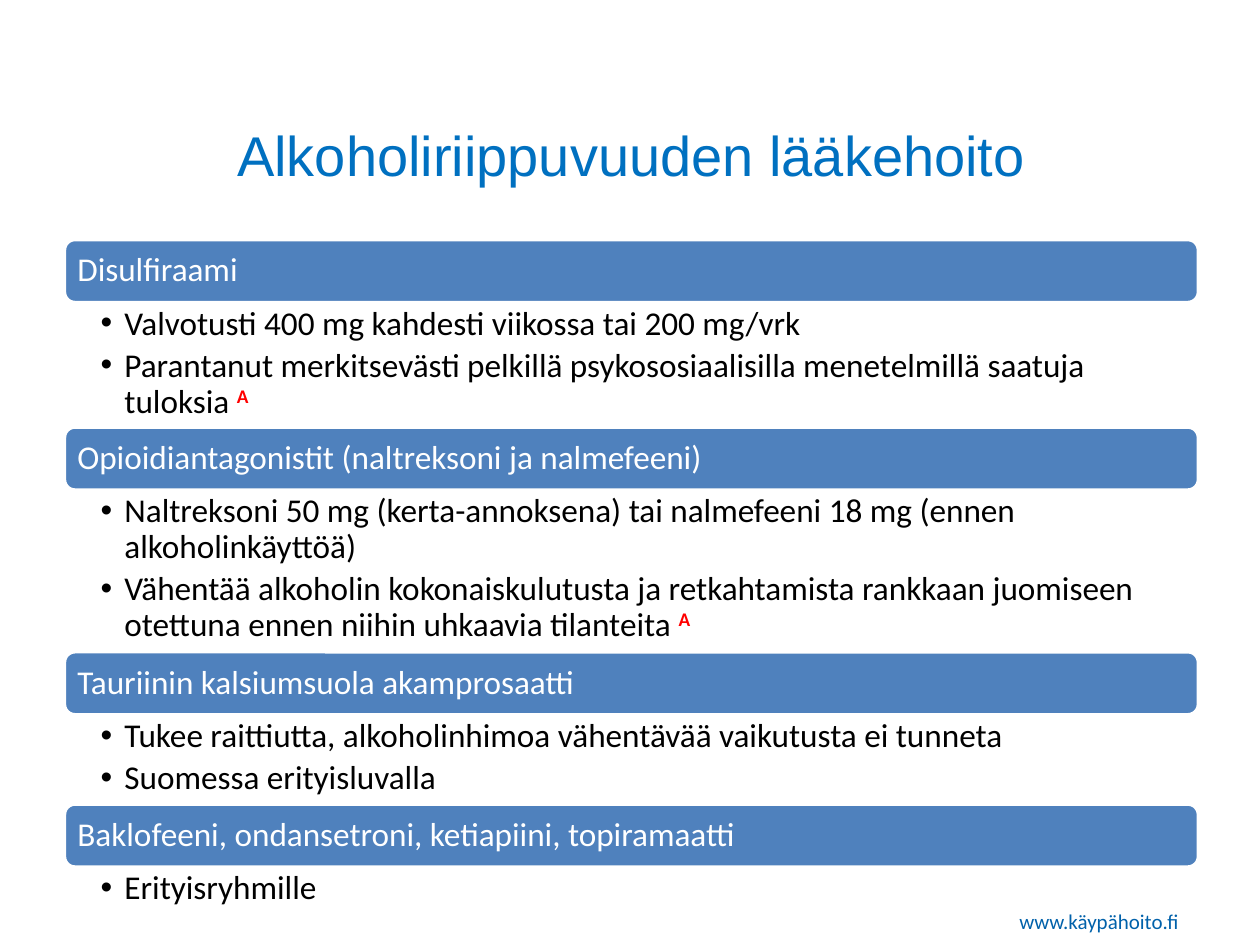
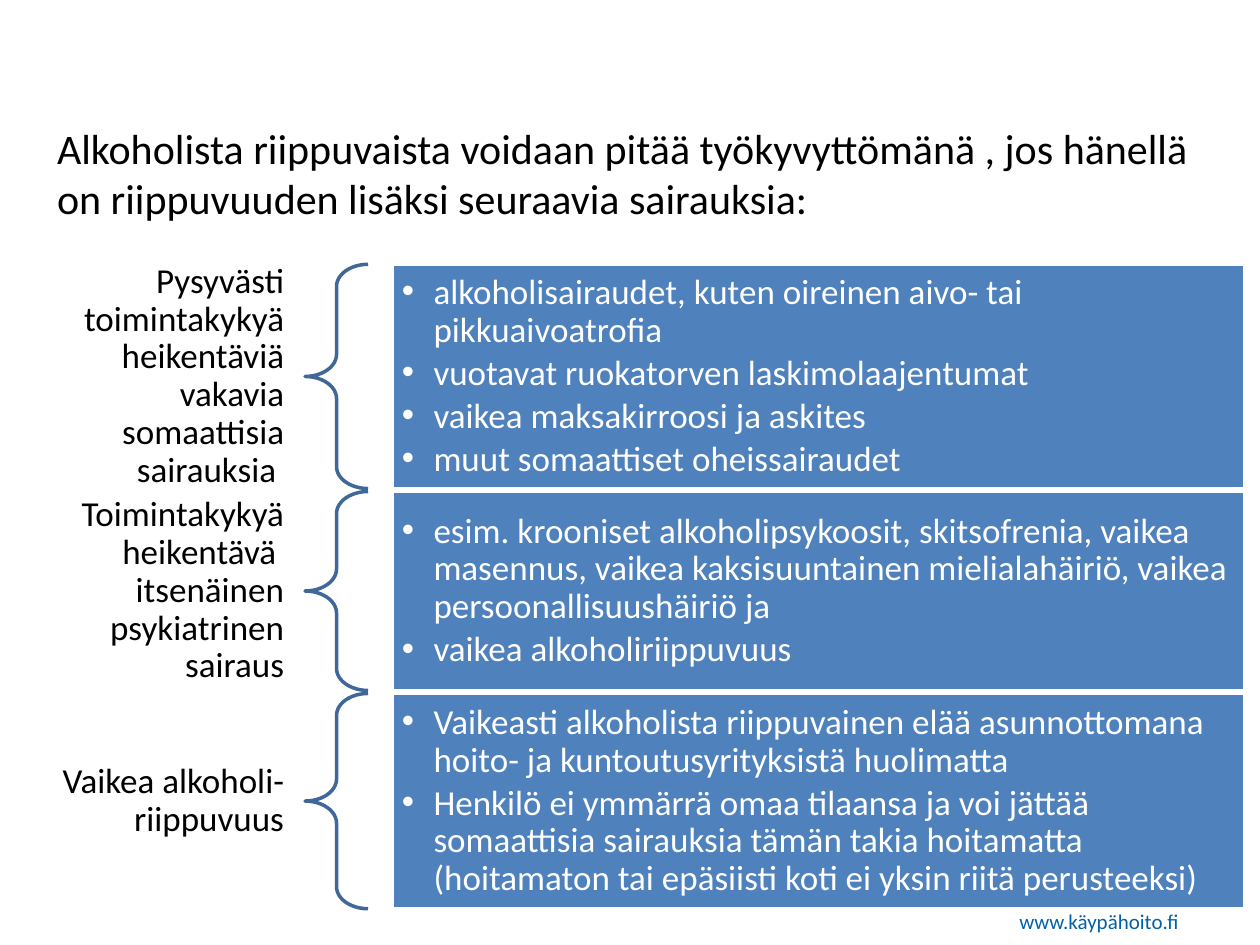
from lxml.etree import SubElement
from pptx import Presentation
from pptx.dml.color import RGBColor
from pptx.enum.shapes import MSO_SHAPE
from pptx.enum.text import MSO_ANCHOR, MSO_AUTO_SIZE, PP_ALIGN
from pptx.oxml.ns import qn
from pptx.util import Cm, Pt

BLUE = RGBColor(0x4F, 0x81, 0xBD)
BRACE_BLUE = RGBColor(0x3F, 0x67, 0x97)
TITLE_BLUE = RGBColor(0x00, 0x70, 0xC0)
FOOTER_BLUE = RGBColor(0x00, 0x61, 0xAA)
RED = RGBColor(0xFF, 0x00, 0x00)
BLACK = RGBColor(0x00, 0x00, 0x00)
WHITE = RGBColor(0xFF, 0xFF, 0xFF)


def set_frame(shape, insets, anchor):
    """Set wrapping, anchor and insets (left, top, right, bottom in cm)."""
    frame = shape.text_frame
    frame.word_wrap = True
    frame.auto_size = MSO_AUTO_SIZE.NONE
    frame.vertical_anchor = anchor
    (frame.margin_left, frame.margin_top,
     frame.margin_right, frame.margin_bottom) = [Cm(inset) for inset in insets]
    return frame


def write(frame, lines, size, color, font="Calibri", align=PP_ALIGN.LEFT,
          spacing=None, after=0, indent=0):
    """Write lines of (text, evidence grade); an indent adds bullets."""
    frame.text = "\n".join(text for text, grade in lines)
    for paragraph, (text, grade) in zip(frame.paragraphs, lines):
        paragraph.alignment = align
        paragraph.space_before = Pt(0)
        paragraph.space_after = Pt(after)
        if spacing:
            paragraph.line_spacing = spacing
        if indent:
            props = paragraph._p.get_or_add_pPr()
            props.set("marL", str(Cm(indent)))
            props.set("indent", str(-Cm(indent)))
            SubElement(props, qn("a:buFont")).set("typeface", "Arial")
            SubElement(props, qn("a:buChar")).set("char", "•")
        for run in paragraph.runs:
            run.font.name = font
            run.font.size = Pt(size)
            run.font.color.rgb = color
        if grade:
            mark = paragraph.add_run()
            mark.text = grade
            mark.font.name = font
            mark.font.size = Pt(size)
            mark.font.bold = True
            mark.font.color.rgb = RED
            mark._r.get_or_add_rPr().set("baseline", "30000")


prs = Presentation()
prs.slide_width, prs.slide_height = Cm(25.4), Cm(19.05)
title_only = prs.slide_layouts[5]
treatment_slide = prs.slides.add_slide(title_only)
disability_slide = prs.slides.add_slide(title_only)

# Shared footer
for slide in (treatment_slide, disability_slide):
    footer = slide.shapes.add_textbox(Cm(20.3), Cm(18.19), Cm(4.8), Cm(0.76))
    write(set_frame(footer, (0.25, 0.13, 0.25, 0.13), MSO_ANCHOR.TOP),
          [("www.käypähoito.fi", "")], 12, FOOTER_BLUE)

# Slide 1: drug treatment of alcohol dependence
title = treatment_slide.shapes.title
title.left, title.top, title.width, title.height = Cm(1.3), Cm(1.52), Cm(22.86), Cm(3.18)
write(set_frame(title, (0.25, 0.13, 0.25, 0.13), MSO_ANCHOR.MIDDLE),
      [("Alkoholiriippuvuuden lääkehoito", "")], 32, TITLE_BLUE,
      font="Arial", align=PP_ALIGN.CENTER)

# Drug name, height of its notes, notes with evidence grade
drugs = [
    ("Disulfiraami", 2.51, [
        ("Valvotusti 400 mg kahdesti viikossa tai 200 mg/vrk", ""),
        ("Parantanut merkitsevästi pelkillä psykososiaalisilla menetelmillä "
         "saatuja tuloksia ", "A")]),
    ("Opioidiantagonistit (naltreksoni ja nalmefeeni)", 3.26, [
        ("Naltreksoni 50 mg (kerta-annoksena) tai nalmefeeni 18 mg "
         "(ennen alkoholinkäyttöä)", ""),
        ("Vähentää alkoholin kokonaiskulutusta ja retkahtamista rankkaan "
         "juomiseen otettuna ennen niihin uhkaavia tilanteita ", "A")]),
    ("Tauriinin kalsiumsuola akamprosaatti", 1.8, [
        ("Tukee raittiutta, alkoholinhimoa vähentävää vaikutusta ei tunneta", ""),
        ("Suomessa erityisluvalla", "")]),
    ("Baklofeeni, ondansetroni, ketiapiini, topiramaatti", 0.86, [
        ("Erityisryhmille", "")]),
]
BAND_HEIGHT = 1.27
top = 4.83
for drug, notes_height, notes in drugs:
    band = treatment_slide.shapes.add_shape(
        MSO_SHAPE.ROUNDED_RECTANGLE, Cm(1.3), Cm(top), Cm(22.86), Cm(BAND_HEIGHT))
    band.shadow.inherit = False
    band.fill.solid()
    band.fill.fore_color.rgb = BLUE
    band.line.color.rgb = WHITE
    band.line.width = Pt(2)
    write(set_frame(band, (0.2, 0.2, 0.2, 0.2), MSO_ANCHOR.MIDDLE),
          [(drug, "")], 19, WHITE, spacing=0.9)
    top += BAND_HEIGHT

    note_box = treatment_slide.shapes.add_textbox(
        Cm(1.3), Cm(top), Cm(22.86), Cm(notes_height))
    write(set_frame(note_box, (0.73, 0.08, 0.38, 0.08), MSO_ANCHOR.TOP),
          notes, 19, BLACK, spacing=0.9, after=3.5, indent=0.48)
    top += notes_height

# Slide 2: illnesses that justify work disability
title = disability_slide.shapes.title
title.left, title.top, title.width, title.height = Cm(0.9), Cm(2.34), Cm(23.44), Cm(2.31)
write(set_frame(title, (0.25, 0.13, 0.25, 0.13), MSO_ANCHOR.TOP),
      [("Alkoholista riippuvaista voidaan pitää työkyvyttömänä , jos hänellä "
        "on riippuvuuden lisäksi seuraavia sairauksia:", "")], 24, BLACK)

# Illness group, height of its row, examples
illnesses = [
    ("Pysyvästi toimintakykyä heikentäviä vakavia somaattisia sairauksia ", 4.52, [
        "alkoholisairaudet, kuten oireinen aivo- tai pikkuaivoatrofia",
        "vuotavat ruokatorven laskimolaajentumat",
        "vaikea maksakirroosi ja askites",
        "muut somaattiset oheissairaudet"]),
    ("Toimintakykyä heikentävä  itsenäinen psykiatrinen sairaus", 4.01, [
        "esim. krooniset alkoholipsykoosit, skitsofrenia, vaikea masennus, vaikea "
        "kaksisuuntainen mielialahäiriö, vaikea persoonallisuushäiriö ja",
        "vaikea alkoholiriippuvuus"]),
    ("Vaikea alkoholi-riippuvuus", 4.34, [
        "Vaikeasti alkoholista riippuvainen elää asunnottomana hoito- ja "
        "kuntoutusyrityksistä huolimatta",
        "Henkilö ei ymmärrä omaa tilaansa ja voi jättää somaattisia sairauksia "
        "tämän takia hoitamatta (hoitamaton tai epäsiisti koti ei yksin riitä "
        "perusteeksi)"]),
]
ROW_GAP = 0.06
top = 5.33
for group, height, examples in illnesses:
    group_box = disability_slide.shapes.add_textbox(
        Cm(0), Cm(top), Cm(6.14), Cm(height))
    write(set_frame(group_box, (0.22, 0.15, 0.41, 0.15), MSO_ANCHOR.MIDDLE),
          [(group, "")], 20, BLACK, align=PP_ALIGN.RIGHT, spacing=0.9)

    brace = disability_slide.shapes.add_shape(
        MSO_SHAPE.LEFT_BRACE, Cm(6.15), Cm(top), Cm(1.27), Cm(height))
    brace.shadow.inherit = False
    brace.adjustments[0] = 0.35
    brace.fill.background()
    brace.line.color.rgb = BRACE_BLUE
    brace.line.width = Pt(2)

    panel = disability_slide.shapes.add_shape(
        MSO_SHAPE.RECTANGLE, Cm(7.9), Cm(top), Cm(17.2), Cm(height))
    panel.shadow.inherit = False
    panel.fill.solid()
    panel.fill.fore_color.rgb = BLUE
    panel.line.color.rgb = WHITE
    panel.line.width = Pt(2)
    write(set_frame(panel, (0.2, 0.2, 0.2, 0.2), MSO_ANCHOR.MIDDLE),
          [(example, "") for example in examples], 20, WHITE,
          spacing=0.9, after=3, indent=0.64)
    top += height + ROW_GAP

prs.save("out.pptx")
